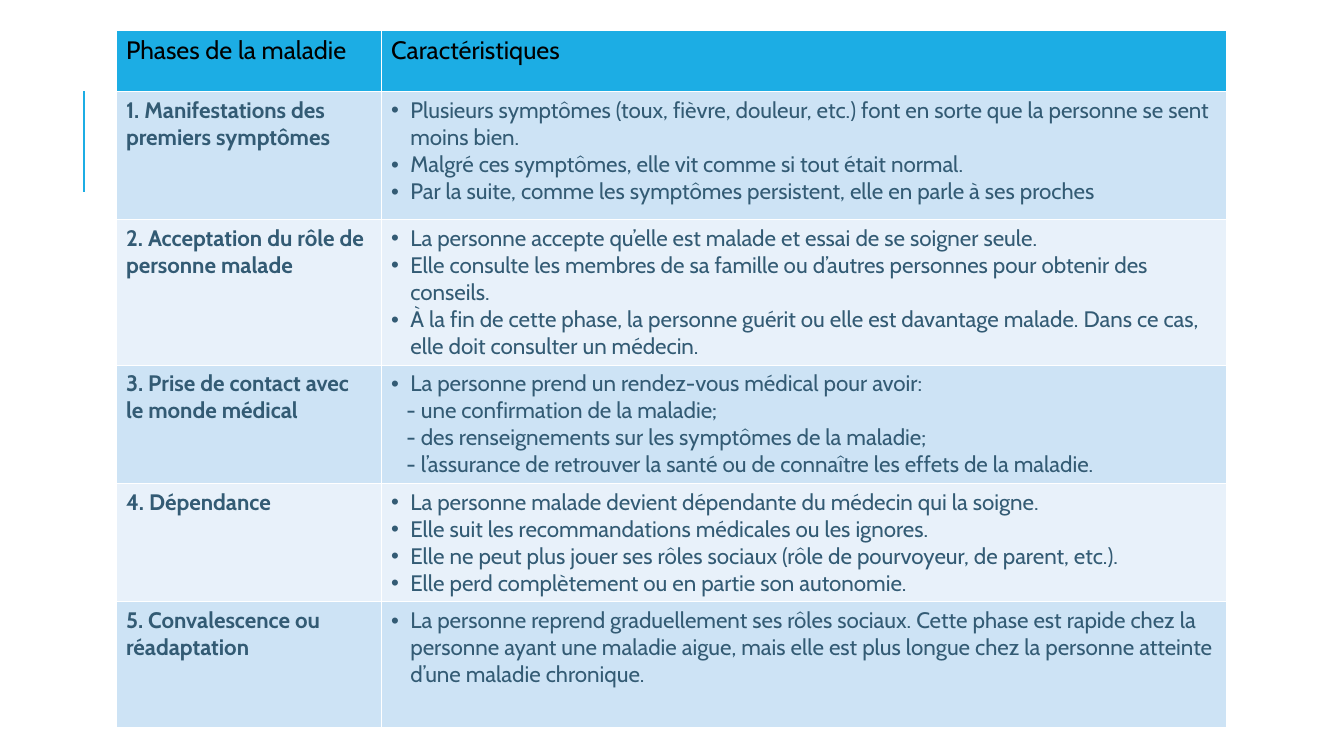
from pptx import Presentation
from pptx.dml.color import RGBColor
from pptx.enum.shapes import MSO_CONNECTOR
from pptx.oxml.ns import qn
from pptx.util import Inches, Pt
from lxml.etree import SubElement

COLORS = {
    "accent": "1CADE4",
    "odd_row": "CDE3F5",
    "even_row": "E8F1FA",
    "border": "FFFFFF",
    "heading": "000000",
    "body": "335B74",
}
FONT = "Cabin"
HEADER_FORMAT = {"size": Pt(18), "bold": False}
PHASE_FORMAT = {"size": Pt(16), "bold": True}
DETAIL_FORMAT = {"size": Pt(16), "bold": False}

COLUMN_WIDTHS = [2.63, 8.39]
ROW_HEIGHTS = [0.61, 1.27, 1.14, 1.12, 1.16, 1.25]
BULLET_INDENT = 0.19
DASH_INDENT = 0.15

HEADERS = ["Phases de la maladie", "Caractéristiques"]
PHASES = [
    ("1. Manifestations des premiers symptômes", [
        "Plusieurs symptômes (toux, fièvre, douleur, etc.) font en sorte que la personne se sent moins bien.",
        "Malgré ces symptômes, elle vit comme si tout était normal.",
        "Par la suite, comme les symptômes persistent, elle en parle à ses proches",
    ]),
    ("2. Acceptation du rôle de personne malade", [
        "La personne accepte qu’elle est malade et essai de se soigner seule.",
        "Elle consulte les membres de sa famille ou d’autres personnes pour obtenir des conseils.",
        "À la fin de cette phase, la personne guérit ou elle est davantage malade. "
        "Dans ce cas, elle doit consulter un médecin.",
    ]),
    ("3. Prise de contact avec le monde médical", [
        "La personne prend un rendez-vous médical pour avoir:",
        "- une confirmation de la maladie;",
        "- des renseignements sur les symptômes de la maladie;",
        "- l’assurance de retrouver la santé ou de connaître les effets de la maladie.",
    ]),
    ("4. Dépendance", [
        "La personne malade devient dépendante du médecin qui la soigne.",
        "Elle suit les recommandations médicales ou les ignores.",
        "Elle ne peut plus jouer ses rôles sociaux (rôle de pourvoyeur, de parent, etc.).",
        "Elle perd complètement ou en partie son autonomie.",
    ]),
    ("5. Convalescence ou réadaptation", [
        "La personne reprend graduellement ses rôles sociaux. Cette phase est rapide chez la personne "
        "ayant une maladie aigue, mais elle est plus longue chez la personne atteinte d’une maladie chronique.",
    ]),
]


def rgb(name):
    return RGBColor.from_string(COLORS[name])


def style_cell(cell, fill):
    properties = cell._tc.get_or_add_tcPr()
    for side in ("a:lnL", "a:lnR", "a:lnT", "a:lnB"):
        border = SubElement(properties, qn(side), w=str(Pt(1)))
        solid = SubElement(border, qn("a:solidFill"))
        SubElement(solid, qn("a:srgbClr"), val=COLORS["border"])
    cell.fill.solid()
    cell.fill.fore_color.rgb = rgb(fill)


def indent_paragraph(paragraph, is_dash):
    properties = paragraph._p.get_or_add_pPr()
    if is_dash:
        properties.set("marL", str(Inches(DASH_INDENT)))
        return
    properties.set("marL", str(Inches(BULLET_INDENT)))
    properties.set("indent", str(-Inches(BULLET_INDENT)))
    SubElement(properties, qn("a:buFont"), typeface="Arial")
    SubElement(properties, qn("a:buChar"), char="•")


def write_cell(cell, lines, fill, color, text_format, is_list=False):
    style_cell(cell, fill)
    frame = cell.text_frame
    for index, line in enumerate(lines):
        paragraph = frame.add_paragraph() if index else frame.paragraphs[0]
        if is_list:
            indent_paragraph(paragraph, line.startswith("- "))
        run = paragraph.add_run()
        run.text = line
        run.font.name = FONT
        run.font.color.rgb = rgb(color)
        for name, value in text_format.items():
            setattr(run.font, name, value)


def add_side_rule(slide, left, top, height):
    rule = slide.shapes.add_connector(
        MSO_CONNECTOR.STRAIGHT, Inches(left), Inches(top + height), Inches(left), Inches(top))
    rule.line.color.rgb = rgb("accent")
    rule.line.width = Pt(1.5)
    SubElement(rule._element.spPr, qn("a:effectLst"))


def add_phase_table(slide, left, top):
    shape = slide.shapes.add_table(
        len(ROW_HEIGHTS), len(COLUMN_WIDTHS), Inches(left), Inches(top),
        Inches(sum(COLUMN_WIDTHS)), Inches(sum(ROW_HEIGHTS)))
    table = shape.table
    for column, width in zip(table.columns, COLUMN_WIDTHS):
        column.width = Inches(width)
    for row, height in zip(table.rows, ROW_HEIGHTS):
        row.height = Inches(height)
    for index, header in enumerate(HEADERS):
        write_cell(table.cell(0, index), [header], "accent", "heading", HEADER_FORMAT)
    for row, (phase, details) in enumerate(PHASES, start=1):
        fill = "odd_row" if row % 2 else "even_row"
        write_cell(table.cell(row, 0), [phase], fill, "body", PHASE_FORMAT)
        write_cell(table.cell(row, 1), details, fill, "body", DETAIL_FORMAT, is_list=True)


def main():
    presentation = Presentation()
    presentation.slide_width = Inches(13.33)
    presentation.slide_height = Inches(7.5)
    slide = presentation.slides.add_slide(presentation.slide_layouts[6])
    add_side_rule(slide, 0.83, 0.9, 1)
    add_phase_table(slide, 1.15, 0.3)
    presentation.save("out.pptx")


if __name__ == "__main__":
    main()
